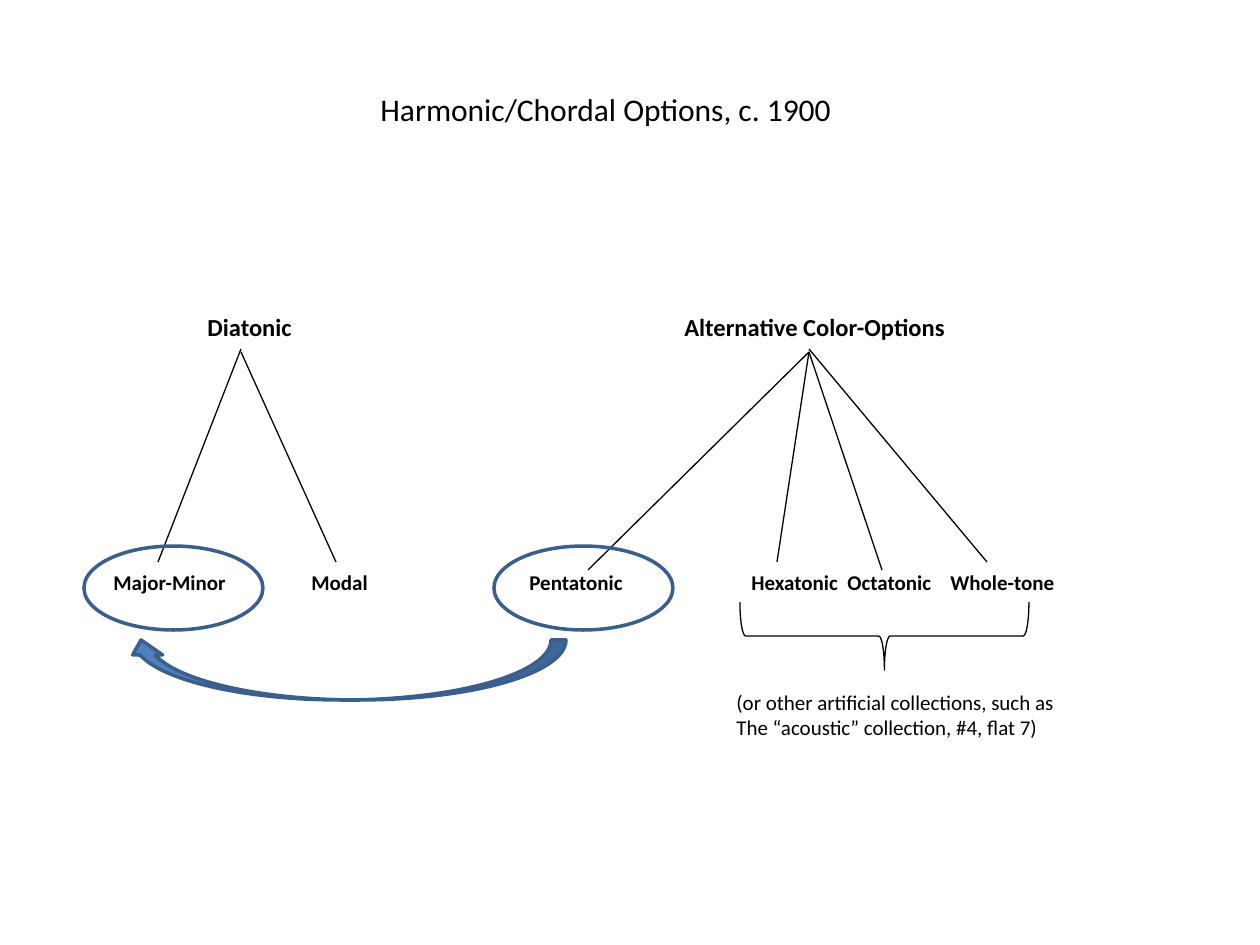
from lxml import etree
from pptx import Presentation
from pptx import util as u
from pptx.dml.color import RGBColor
from pptx.enum import shapes, text
from pptx.oxml import ns

PX = u.Inches(1) / 126
BLACK = RGBColor(0x00, 0x00, 0x00)
BLUE = RGBColor(0x4F, 0x81, 0xBD)
DARK_BLUE = RGBColor(0x3A, 0x5F, 0x8C)
FONT = "Calibri"


def px(*lengths):
    return [u.Emu(round(length * PX)) for length in lengths]


def add_text(page, box, words, size, bold=False):
    area = page.shapes.add_textbox(*px(*box))
    frame = area.text_frame
    frame.word_wrap = True
    frame.auto_size = text.MSO_AUTO_SIZE.SHAPE_TO_FIT_TEXT
    frame.text = words
    for para in frame.paragraphs:
        for span in para.runs:
            span.font.name = FONT
            span.font.size = u.Pt(size)
            span.font.bold = bold
            span.font.color.rgb = BLACK
    return frame


def add_outline(page, kind, box, color, width, fill=None, turn=0):
    """Place a shape so that it fills the box once turned by 0, 90 or 270 degrees."""
    left, top, wide, high = box
    if turn in (90, 270):
        left, top = left + (wide - high) / 2, top + (high - wide) / 2
        wide, high = high, wide
    shape = page.shapes.add_shape(kind, *px(left, top, wide, high))
    shape.rotation = turn
    shape.shadow.inherit = False
    shape.line.color.rgb = color
    shape.line.width = u.Pt(width)
    if fill is None:
        shape.fill.background()
    else:
        shape.fill.solid()
        shape.fill.fore_color.rgb = fill


def add_branch(page, start, end):
    branch = page.shapes.add_connector(shapes.MSO_CONNECTOR.STRAIGHT, *px(*start, *end))
    branch.line.color.rgb = BLACK
    branch.line.width = u.Pt(0.75)
    etree.SubElement(branch._element.spPr, ns.qn("a:effectLst"))


def add_tree(page, box, heading, apex, ends):
    """Heading in the box, with branches from the apex to ends relative to the box."""
    left, top = box[:2]
    add_text(page, box, heading, 14, bold=True)
    for rise, x, y in ends:
        add_branch(page, (left + apex, top + 46 - rise), (left + x, top + y))


def add_scale_names(page, box, names, stops):
    """One line of names, each after the first set at a tab stop."""
    frame = add_text(page, box, "\t".join(names), 12, bold=True)
    properties = frame.paragraphs[0]._p.get_or_add_pPr()
    tabs = etree.SubElement(properties, ns.qn("a:tabLst"))
    for stop in px(*stops):
        etree.SubElement(tabs, ns.qn("a:tab"), pos=str(stop), algn="l")


def add_artificial_group(page, box):
    left, top, wide, high = box
    add_outline(page, shapes.MSO_SHAPE.LEFT_BRACE, (left + 16, top, 289, 68), BLACK, 0.75, turn=270)
    note = "(or other artificial collections, such as\nThe “acoustic” collection, #4, flat 7)"
    add_text(page, (left, top + 81, wide, high - 81), note, 12)


def add_exchange(page, box):
    """Ring the scale at each end of the box and bend an arrow from right to left."""
    left, top, wide, high = box
    ring_wide, ring_high = 179, 84
    for x in (left + wide - ring_wide, left):
        add_outline(page, shapes.MSO_SHAPE.OVAL, (x, top, ring_wide, ring_high), DARK_BLUE, 2)
    arrow = (left + 42, top + high - 60, 440, 60)
    add_outline(page, shapes.MSO_SHAPE.CURVED_LEFT_ARROW, arrow, DARK_BLUE, 2, fill=BLUE, turn=90)


def main():
    deck = Presentation()
    deck.slide_width, deck.slide_height = px(1260, 945)
    page = deck.slides.add_slide(deck.slide_layouts[6])

    add_text(page, (368, 84, 514, 50), "Harmonic/Chordal Options, c. 1900", 18)
    add_scale_names(
        page, (101, 563, 1050, 43),
        ("Major-Minor", "Modal", "Pentatonic", "Hexatonic", "Octatonic", "Whole-tone"),
        (198, 416, 638, 734, 837))
    add_artificial_group(page, (724, 602, 368, 144))
    add_tree(page, (195, 306, 158, 43), "Diatonic", 46,
             ((3, -37, 256), (0, 141, 256)))
    add_tree(page, (672, 306, 305, 43), "Alternative Color-Options", 137,
             ((0, -84, 264), (3, 315, 256), (0, 105, 256), (0, 210, 264)))
    add_exchange(page, (84, 546, 589, 154))

    deck.save("out.pptx")


if __name__ == "__main__":
    main()
